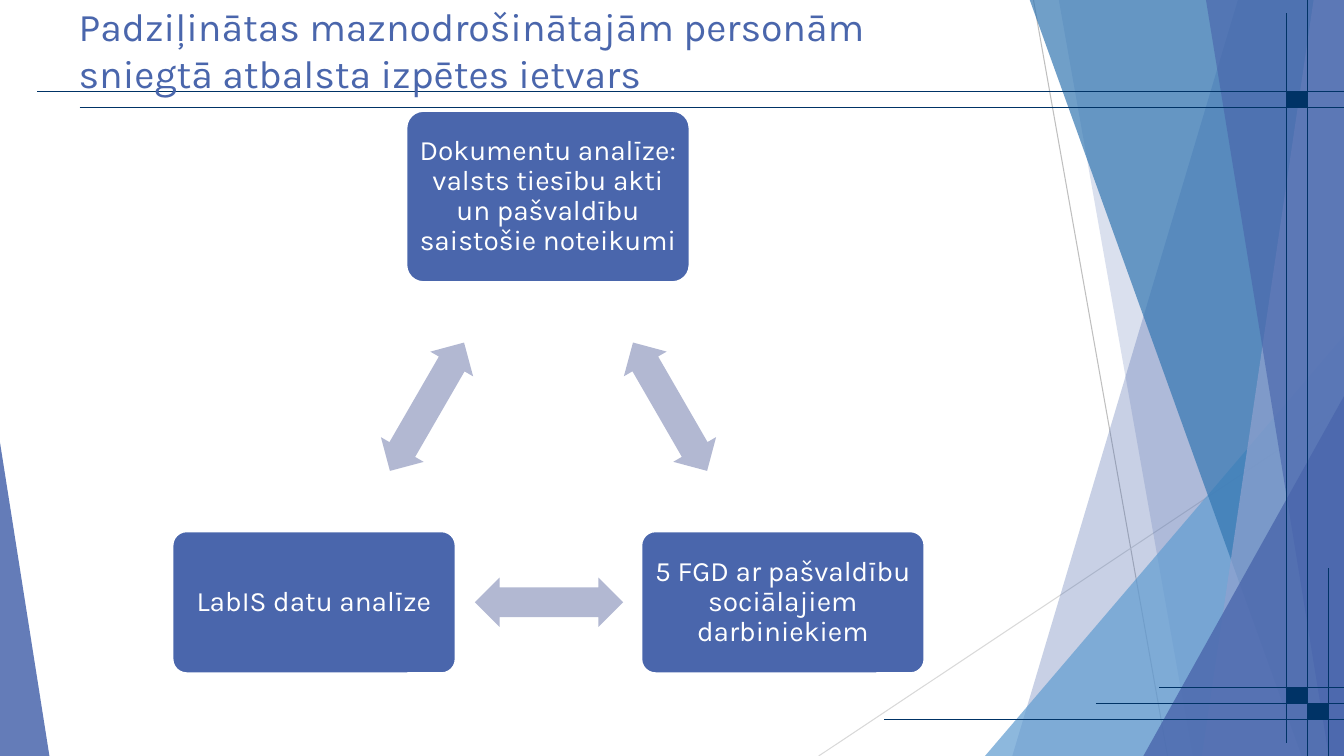
import pptx
import pptx.util
import pptx.dml.color
import pptx.enum.shapes
import pptx.enum.text
import pptx.oxml
import pptx.oxml.ns

RGB = pptx.dml.color.RGBColor
KIND = pptx.enum.shapes.MSO_SHAPE
ALIGN = pptx.enum.text.PP_ALIGN
ANCHOR = pptx.enum.text.MSO_ANCHOR

WHITE = RGB(0xFF, 0xFF, 0xFF)
BLUE = RGB(0x4A, 0x66, 0xAC)
SKY = RGB(0x62, 0x9D, 0xD1)
TEAL = RGB(0x34, 0x77, 0xB2)
PALE = RGB(0x90, 0xA2, 0xCF)
NAVY = RGB(0x00, 0x33, 0x66)
MIST = RGB(0xB2, 0xB8, 0xD2)
GREY = RGB(0xBF, 0xBF, 0xBF)
SILVER = RGB(0xD9, 0xD9, 0xD9)

PX = 9144  # 100 px to the inch
WIDE, HIGH = 1333, 750
FONT = "Karla"


class Page:
    def __init__(self, deck):
        self.slide = deck.slides.add_slide(deck.slide_layouts[5])
        self.shapes = self.slide.shapes

    def paint(self, shape, color, alpha=100, edge=None, width=0.75):
        shape.shadow.inherit = False
        shape.fill.solid()
        shape.fill.fore_color.rgb = color
        if alpha < 100:
            tone = shape._element.spPr.find(
                "/".join(map(pptx.oxml.ns.qn, ("a:solidFill", "a:srgbClr"))))
            tone.append(pptx.oxml.parse_xml(
                f'<a:alpha {pptx.oxml.ns.nsdecls("a")} val="{alpha * 1000}"/>'))
        if edge is None:
            shape.line.fill.background()
        else:
            shape.line.color.rgb = edge
            shape.line.width = pptx.util.Pt(width)

    def form(self, kind, box, color, adjs=(), turn=0, **style):
        """Add a preset shape; box is left, top, width, height."""
        shape = self.shapes.add_shape(kind, *(n * PX for n in box))
        for i, value in enumerate(adjs):
            shape.adjustments[i] = value
        shape.rotation = turn
        self.paint(shape, color, **style)
        return shape

    def band(self, top, foot, color, alpha):
        """Add a slanted band that reaches the right edge of the slide."""
        pen = self.shapes.build_freeform(top, -1, scale=PX)
        pen.add_line_segments([(WIDE, -1), (WIDE, HIGH), (foot, HIGH)])
        self.paint(pen.convert_to_shape(), color, alpha)

    def rule(self, x1, y1, x2, y2, color=NAVY):
        line = self.shapes.add_connector(
            pptx.enum.shapes.MSO_CONNECTOR.STRAIGHT,
            *(n * PX for n in (x1, y1, x2, y2)))
        line.line.color.rgb = color
        line.line.width = pptx.util.Pt(0.75)
        line._element.spPr.append(pptx.oxml.parse_xml(
            f'<a:effectLst {pptx.oxml.ns.nsdecls("a")}/>'))

    def label(self, shape, text, size, color, align, anchor, pad):
        frame = shape.text_frame
        frame.text = text
        frame.word_wrap = True
        frame.auto_size = pptx.enum.text.MSO_AUTO_SIZE.NONE
        frame.vertical_anchor = anchor
        frame.margin_left = frame.margin_right = pad * PX
        frame.margin_top = frame.margin_bottom = 5 * PX
        para = frame.paragraphs[0]
        para.alignment = align
        font = para.runs[0].font
        font.name = FONT
        font.size = pptx.util.Pt(size)
        font.color.rgb = color
        return para

    def title(self, text, box):
        shape = self.shapes.title
        shape.left, shape.top, shape.width, shape.height = (n * PX for n in box)
        self.label(shape, text, 28, BLUE, ALIGN.LEFT, ANCHOR.TOP, 10)
        tree = shape._element.getparent()
        tree.append(shape._element)  # bring in front of the backdrop

    def card(self, text, box):
        shape = self.form(KIND.ROUNDED_RECTANGLE, box, BLUE, [0.1],
                          edge=WHITE, width=1.5)
        para = self.label(shape, text, 20, WHITE, ALIGN.CENTER,
                          ANCHOR.MIDDLE, 7)
        para.line_spacing = 0.9

    def arrow(self, x, y, turn):
        """Add a double arrow centred on x, y."""
        wide, high = 147, 49
        box = (x - wide // 2, y - high // 2, wide, high)
        self.form(KIND.LEFT_RIGHT_ARROW, box, MIST, [0.6, 0.5], turn)


def facets(page):
    page.rule(1025, 0, 1158, HIGH, GREY)
    page.rule(WIDE, 403, 812, HIGH, SILVER)
    peak = KIND.ISOSCELES_TRIANGLE
    page.band(1228, 1004, BLUE, 30)
    page.band(1050, 1183, BLUE, 20)
    page.form(peak, (977, 333, 356, 417), SKY, [1], alpha=72)
    page.band(1021, 1291, TEAL, 70)
    page.band(1303, 1192, PALE, 70)
    page.band(1196, 1318, BLUE, 65)
    page.form(peak, (1134, 393, 199, 357), BLUE, [1], alpha=80)
    page.form(peak, (0, 439, 49, 311), BLUE, [0], alpha=85)


def grid(page):
    for x, y in ((37, 91), (79, 107), (1087, 698), (1150, 682), (877, 714)):
        page.rule(x, y, WIDE, y)
    for x, top, foot in ((1297, 0, HIGH), (1276, 13, 737), (1318, 564, HIGH)):
        page.rule(x, top, x, foot)
    for x, y in ((1276, 91), (1276, 682), (1297, 698)):
        page.form(KIND.RECTANGLE, (x, y, 21, 16), NAVY, edge=NAVY)


def cycle(page):
    page.card("Dokumentu analīze: valsts tiesību akti un pašvaldību "
              "saistošie noteikumi", (403, 110, 281, 170))
    page.card("5 FGD ar pašvaldību sociālajiem darbiniekiem",
              (636, 527, 281, 141))
    page.card("LabIS datu analīze", (171, 527, 281, 141))
    for x, y, turn in ((664, 403, 60), (544, 597, 180), (423, 403, 300)):
        page.arrow(x, y, turn)


def main():
    deck = pptx.Presentation()
    deck.slide_width, deck.slide_height = WIDE * PX, HIGH * PX
    page = Page(deck)
    facets(page)
    grid(page)
    page.title("Padziļinātas maznodrošinātajām personām sniegtā atbalsta "
               "izpētes ietvars", (68, -3, 940, 87))
    cycle(page)
    deck.save("out.pptx")


if __name__ == "__main__":
    main()
